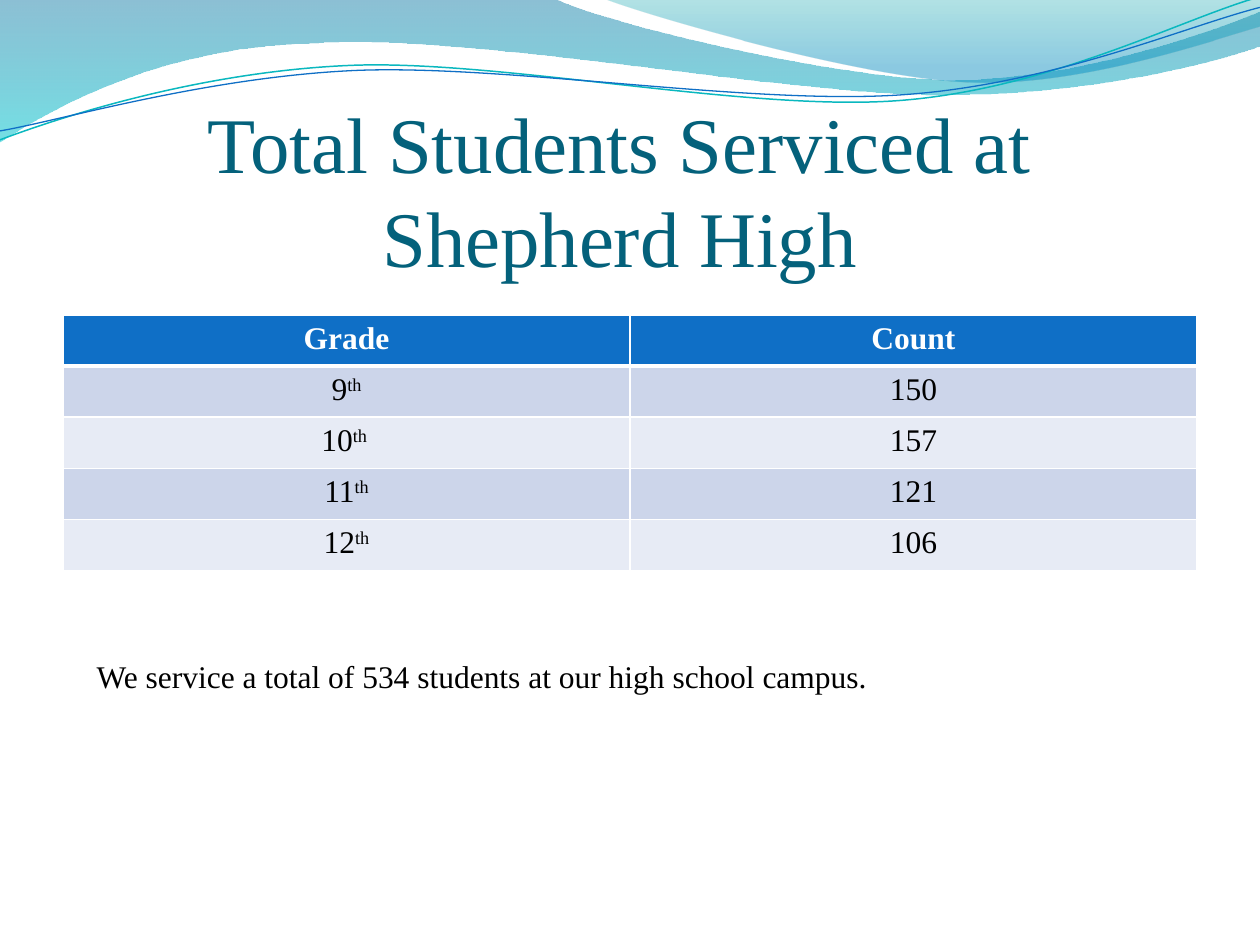
"""Build the slide on students serviced per grade at Shepherd High."""
from lxml import etree
from pptx import Presentation, util as u
from pptx.dml.color import RGBColor
from pptx.enum import text
from pptx.oxml.ns import qn

FONT = "Times New Roman"
WHITE = RGBColor(0xFF, 0xFF, 0xFF)
BLACK = RGBColor(0, 0, 0)
TITLE_TEAL = RGBColor(0x04, 0x61, 0x7B)
HEADER_BLUE = RGBColor(0x0F, 0x6F, 0xC6)
LINE_TEAL = RGBColor(0x0A, 0xB8, 0xBF)
BAND_DARK = RGBColor(0xCC, 0xD5, 0xEA)
BAND_LIGHT = RGBColor(0xE7, 0xEB, 0xF5)
WAVE_BLUE = RGBColor(0x00, 0x74, 0xA1)
WAVE_CYAN = RGBColor(0x00, 0xC6, 0xCF)
CREST_TEAL = RGBColor(0x00, 0xA1, 0xA9)
CREST_BLUE = RGBColor(0x00, 0x8B, 0xBF)


def add_curve(shapes, start, segments, close):
    """Draw straight (one point) and cubic (three points) segments, in cm."""
    routes = [[(u.Cm(x), u.Cm(y)) for x, y in segment] for segment in segments]
    builder = shapes.build_freeform(u.Cm(start[0]), u.Cm(start[1]))
    builder.add_line_segments([route[-1] for route in routes], close=close)
    curve = builder.convert_to_shape()
    curve.shadow.inherit = False
    steps = list(curve._element.iter(qn("a:lnTo")))
    for step, route in zip(steps, routes):
        if len(route) == 3:
            bend = etree.Element(qn("a:cubicBezTo"))
            for x, y in route:
                etree.SubElement(bend, qn("a:pt"), x=str(x - curve.left), y=str(y - curve.top))
            step.getparent().replace(step, bend)
    return curve


def add_run(paragraph, words, size, color, bold=False, raised=False):
    run = paragraph.add_run()
    run.text = words
    run.font.name = FONT
    run.font.size = u.Pt(size)
    run.font.bold = bold
    run.font.color.rgb = color
    if raised:
        run.font._element.set("baseline", "30000")


deck = Presentation()
deck.slide_width, deck.slide_height = u.Cm(25.4), u.Cm(19.05)
slide = deck.slides.add_slide(deck.slide_layouts[6])

waves = [
    ((-0.03, -0.03), [
        ((11.18, -0.03),),
        ((12.09, 0.43), (16.87, 1.6), (19.25, 1.6)),
        ((21.67, 1.6), (24.33, 0.66), (25.4, 0.23)),
        ((25.43, 0.91),),
        ((24.97, 1.12), (22.1, 1.93), (18.95, 1.91)),
        ((15.8, 1.91), (9.7, 0.71), (6.53, 0.86)),
        ((3.28, 0.91), (1.17, 2.11), (-0.03, 2.87)),
    ], [(0, WAVE_BLUE, 45), (1, WAVE_CYAN, 55)]),
    ((12.17, -0.03), [
        ((12.93, 0.28), (17.32, 1.57), (19.53, 1.65)),
        ((21.74, 1.75), (24.41, 0.81), (25.4, 0.53)),
        ((25.4, -0.03),),
    ], [(0, CREST_TEAL, 30), (0.8, CREST_BLUE, 45)]),
]
for start, segments, stops in waves:
    wave = add_curve(slide.shapes, start, segments, True)
    wave.line.fill.background()
    wave.fill.gradient()
    wave.fill.gradient_angle = 270
    for stop, (position, color, opacity) in zip(wave.fill.gradient_stops, stops):
        stop.position = position
        stop.color.rgb = color
    for rgb, (position, color, opacity) in zip(
            wave._element.spPr.iter(qn("a:srgbClr")), stops):
        etree.SubElement(rgb, qn("a:alpha"), val=str(opacity * 1000))

strands = [
    ((0, 2.82), [
        ((1.22, 2.36), (4.01, 1.45), (7.04, 1.32)),
        ((10.03, 1.19), (15.06, 2.26), (18.11, 2.03)),
        ((21.16, 1.8), (23.83, 0.38), (25.35, -0.05)),
    ], LINE_TEAL, 0.85),
    ((0, 2.64), [
        ((1.19, 2.44), (4.17, 1.55), (7.19, 1.42)),
        ((10.24, 1.3), (15.16, 2.13), (18.21, 1.91)),
        ((21.23, 1.7), (23.9, 0.53), (25.4, 0.15)),
    ], HEADER_BLUE, 0.75),
]
for start, segments, color, width in strands:
    strand = add_curve(slide.shapes, start, segments, False)
    strand.fill.background()
    strand.line.color.rgb = color
    strand.line.width = u.Pt(width)

title = slide.shapes.add_textbox(u.Cm(1.06), u.Cm(2.54), u.Cm(22.86), u.Cm(3.18)).text_frame
title.word_wrap = True
title.vertical_anchor = text.MSO_ANCHOR.BOTTOM
title.margin_left = title.margin_right = title.margin_bottom = 0
title.paragraphs[0].alignment = text.PP_ALIGN.CENTER
add_run(title.paragraphs[0], "Total Students Serviced at Shepherd High", 45, TITLE_TEAL)

grades = [
    (("Grade",), "Count"),
    (("9", "th"), "150"),
    (("10", "th "), "157"),
    (("11", "th"), "121"),
    (("12", "th"), "106"),
]
counts = slide.shapes.add_table(
    len(grades), 2, u.Cm(1.27), u.Cm(6.35), u.Cm(22.86), u.Cm(5.15)).table
for row, (grade, count) in enumerate(grades):
    counts.rows[row].height = u.Cm(1.03)
    header = row == 0
    band = HEADER_BLUE if header else BAND_DARK if row % 2 else BAND_LIGHT
    edges = {"L": 1, "R": 1, "T": 3 if row == 1 else 1, "B": 3 if header else 1}
    for column, parts in enumerate((grade, (count,))):
        cell = counts.cell(row, column)
        properties = cell._tc.get_or_add_tcPr()
        for side, width in edges.items():
            edge = etree.SubElement(properties, qn(f"a:ln{side}"), w=str(u.Pt(width)))
            paint = etree.SubElement(edge, qn("a:solidFill"))
            etree.SubElement(paint, qn("a:srgbClr"), val=str(WHITE))
        cell.fill.solid()
        cell.fill.fore_color.rgb = band
        entry = cell.text_frame.paragraphs[0]
        entry.alignment = text.PP_ALIGN.CENTER
        for index, part in enumerate(parts):
            add_run(entry, part, 18, WHITE if header else BLACK, header, index == 1)

total = slide.shapes.add_textbox(u.Cm(1.7), u.Cm(13.13), u.Cm(22.02), u.Cm(1.02)).text_frame
total.word_wrap = True
total.auto_size = text.MSO_AUTO_SIZE.SHAPE_TO_FIT_TEXT
add_run(total.paragraphs[0],
        "We service a total of 534 students at our high school campus.", 18, BLACK)

deck.save("out.pptx")
